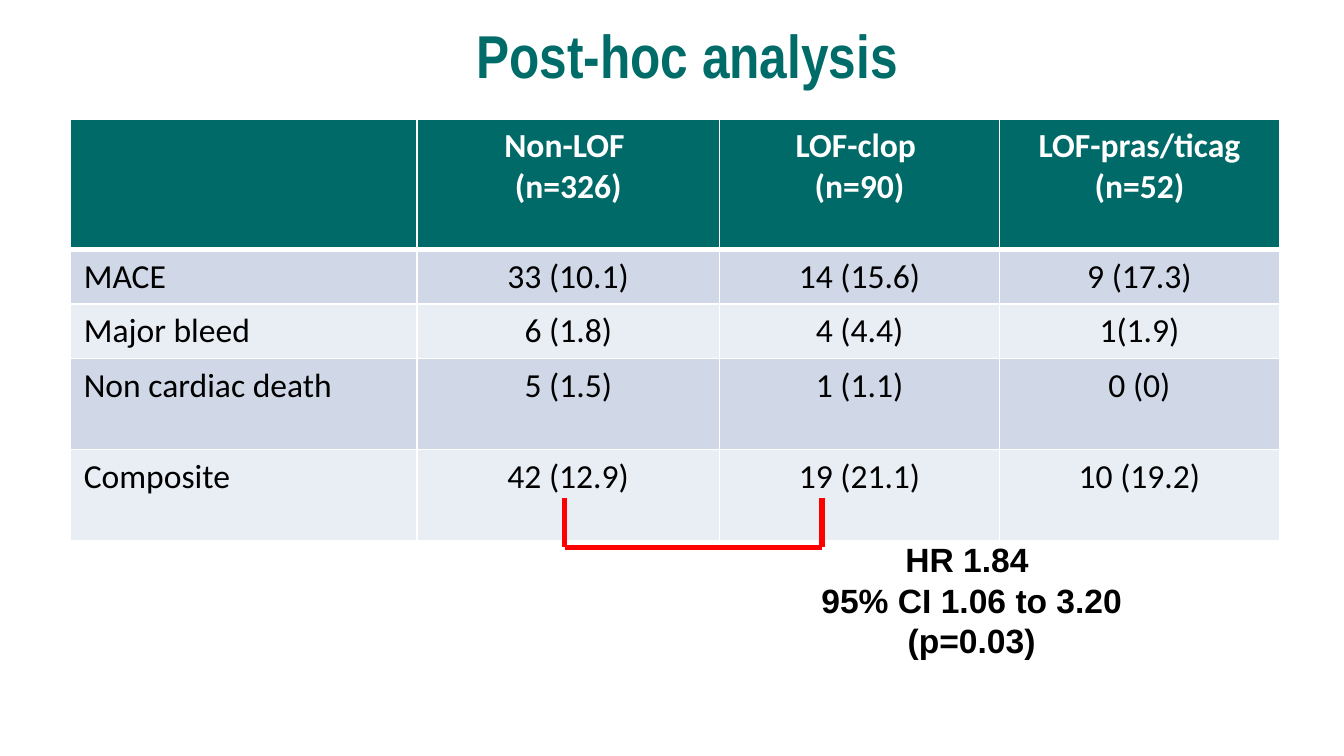
from dataclasses import dataclass

from lxml import etree
from pptx import Presentation
from pptx import util as u
from pptx.dml.color import RGBColor
from pptx.enum import shapes, text
from pptx.oxml import ns


@dataclass(frozen=True)
class Theme:
    title: str = "006C69"
    header: str = "006A68"
    bands: tuple = ("D0D8E8", "E9EDF4")
    white: str = "FFFFFF"
    ink: str = "000000"
    accent: str = "FF0000"
    title_font: str = "Arial Narrow"
    table_font: str = "Calibri"
    note_font: str = "Arial"
    title_size: float = 32.4
    body_size: float = 18


class SlideBuilder:
    def __init__(self, slide, theme):
        self.slide = slide
        self.theme = theme

    def set_text(self, tf, content, font, size, color, bold, align=text.PP_ALIGN.CENTER):
        tf.text = content
        for p in tf.paragraphs:
            p.alignment = align
            for r in p.runs:
                r.font.name = font
                r.font.size = u.Pt(size)
                r.font.bold = bold
                r.font.color.rgb = RGBColor.from_string(color)

    def title(self, content, left, top, width, height):
        sp = self.slide.shapes.title
        sp.left, sp.top, sp.width, sp.height = map(u.Cm, (left, top, width, height))
        tf = sp.text_frame
        tf.auto_size = text.MSO_AUTO_SIZE.NONE
        tf.vertical_anchor = text.MSO_ANCHOR.MIDDLE
        t = self.theme
        self.set_text(tf, content, t.title_font, t.title_size, t.title, True)

    def borders(self, cell, bottom):
        tc_pr = cell._tc.get_or_add_tcPr()
        for side, points in (("L", 1), ("R", 1), ("T", 1), ("B", bottom)):
            ln = etree.SubElement(tc_pr, ns.qn(f"a:ln{side}"), w=str(u.Pt(points)))
            fill = etree.SubElement(ln, ns.qn("a:solidFill"))
            etree.SubElement(fill, ns.qn("a:srgbClr"), val=self.theme.white)

    def table(self, rows, left, top, widths, heights):
        t = self.theme
        frame = self.slide.shapes.add_table(
            len(rows), len(widths), u.Cm(left), u.Cm(top),
            u.Cm(sum(widths)), u.Cm(sum(heights)))
        table = frame.table
        for column, width in zip(table.columns, widths):
            column.width = u.Cm(width)
        for i, (values, height) in enumerate(zip(rows, heights)):
            table.rows[i].height = u.Cm(height)
            header = i == 0
            for j, value in enumerate(values):
                cell = table.cell(i, j)
                self.borders(cell, 3 if header else 1)
                cell.fill.solid()
                cell.fill.fore_color.rgb = RGBColor.from_string(
                    t.header if header else t.bands[(i - 1) % 2])
                align = text.PP_ALIGN.CENTER if j else text.PP_ALIGN.LEFT
                self.set_text(cell.text_frame, value, t.table_font, t.body_size,
                              t.white if header else t.ink, header, align)

    def note(self, content, left, top, width, height):
        sp = self.slide.shapes.add_textbox(*map(u.Cm, (left, top, width, height)))
        sp.text_frame.word_wrap = True
        t = self.theme
        self.set_text(sp.text_frame, content, t.note_font, t.body_size, t.ink, True)

    def line(self, x1, y1, x2, y2):
        cn = self.slide.shapes.add_connector(
            shapes.MSO_CONNECTOR.STRAIGHT, *map(u.Cm, (x1, y1, x2, y2)))
        cn.line.color.rgb = RGBColor.from_string(self.theme.accent)
        cn.line.width = u.Pt(3)
        etree.SubElement(cn._element.spPr, ns.qn("a:effectLst"))

    def bracket(self, left, right, top, bottom):
        for x in (right, left):
            self.line(x, top, x, bottom)
        self.line(left, bottom, right, bottom)


OUTCOMES = [
    ("", "Non-LOF \n(n=326)", "LOF-clop \n(n=90)", "LOF-pras/ticag (n=52)"),
    ("MACE", "33 (10.1)", "14 (15.6)", "9 (17.3)"),
    ("Major bleed", "6 (1.8)", "4 (4.4)", "1(1.9)"),
    ("Non cardiac death", "5 (1.5)", "1 (1.1)", "0 (0)"),
    ("Composite", "42 (12.9)", "19 (21.1)", "10 (19.2)"),
]


def main():
    prs = Presentation()
    prs.slide_width, prs.slide_height = u.Cm(25.4), u.Cm(14.28)
    s = SlideBuilder(prs.slides.add_slide(prs.slide_layouts[5]), Theme())
    s.title("Post-hoc analysis", 1.27, 0.38, 23.44, 1.3)
    s.table(OUTCOMES, 1.33, 2.25, (6.55, 5.72, 5.29, 5.29),
            (2.46, 0.97, 0.97, 1.72, 1.72))
    s.note("HR 1.84 \n95% CI 1.06 to 3.20 (p=0.03)", 14.35, 10.06, 8.03, 2.57)
    s.bracket(10.67, 15.54, 9.4, 10.34)
    prs.save("out.pptx")


if __name__ == "__main__":
    main()
